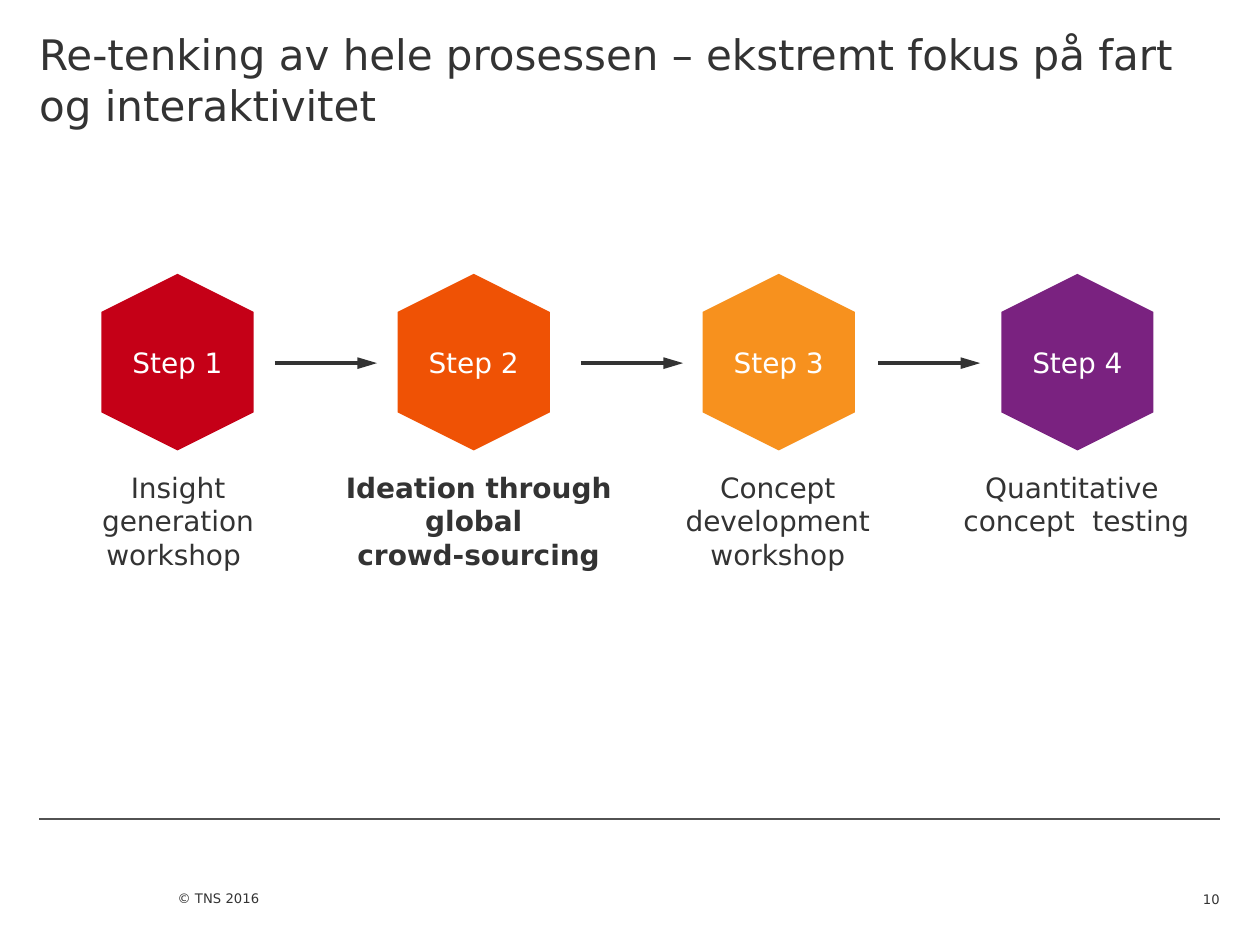
from collections import namedtuple

from lxml import etree
from pptx import Presentation
from pptx.dml.color import RGBColor
from pptx.enum.shapes import MSO_CONNECTOR, MSO_SHAPE
from pptx.enum.text import MSO_ANCHOR, MSO_AUTO_SIZE, PP_ALIGN
from pptx.oxml.ns import qn
from pptx.util import Cm, Pt

HEXAGON = MSO_SHAPE.HEXAGON
STRAIGHT = MSO_CONNECTOR.STRAIGHT
TOP, MIDDLE, BOTTOM = MSO_ANCHOR.TOP, MSO_ANCHOR.MIDDLE, MSO_ANCHOR.BOTTOM
LEFT, CENTER, RIGHT = PP_ALIGN.LEFT, PP_ALIGN.CENTER, PP_ALIGN.RIGHT
NO_AUTOFIT = MSO_AUTO_SIZE.NONE

FONT = "DejaVu Sans"
DARK = RGBColor(0x33, 0x33, 0x33)
GREY = RGBColor(0x52, 0x52, 0x52)
WHITE = RGBColor(0xFF, 0xFF, 0xFF)
RED = RGBColor(0xC5, 0x00, 0x17)
ORANGE = RGBColor(0xEF, 0x52, 0x05)
AMBER = RGBColor(0xF7, 0x91, 0x1E)
PURPLE = RGBColor(0x7A, 0x22, 0x80)

Box = namedtuple("Box", "left top width height")
Step = namedtuple("Step", "center color label label_center label_width bold")

STEPS = [
    Step(3.58, RED, "Insight generation workshop ", 3.59, 5.41, False),
    Step(9.55, ORANGE, "Ideation through \nglobal \vcrowd-sourcing", 9.65, 5.94, True),
    Step(15.7, AMBER, "Concept development workshop", 15.68, 5.41, False),
    Step(21.72, PURPLE, "Quantitative \vconcept  testing", 21.7, 6.88, False),
]
ARROW_CENTERS = [6.57, 12.74, 18.73]
ARROW_LENGTH = 2.06
HEXAGON_LENGTH, HEXAGON_WIDTH = 3.56, 3.07


def write_text(shape, text, size, color=DARK, align=LEFT, anchor=TOP, bold=False,
               insets=(0, 0, 0, 0)):
    """Fill a shape with formatted text; insets are left, top, right, bottom in cm."""
    frame = shape.text_frame
    frame.text = text
    frame.word_wrap = True
    frame.auto_size = NO_AUTOFIT
    frame.vertical_anchor = anchor
    (frame.margin_left, frame.margin_top,
     frame.margin_right, frame.margin_bottom) = map(Cm, insets)
    for paragraph in frame.paragraphs:
        paragraph.alignment = align
        for run in paragraph.runs:
            run.font.name = FONT
            run.font.size = Pt(size)
            run.font.bold = bold
            run.font.color.rgb = color


def add_text(slide, box, text, size, **style):
    """Add a text box."""
    write_text(slide.shapes.add_textbox(*map(Cm, box)), text, size, **style)


def add_line(slide, left, right, y, color, width, arrow=False):
    """Add a horizontal line, with an arrowhead at its right end on request."""
    line = slide.shapes.add_connector(STRAIGHT, Cm(left), Cm(y), Cm(right), Cm(y))
    line.line.color.rgb = color
    line.line.width = Pt(width)
    if arrow:
        etree.SubElement(line.line._get_or_add_ln(), qn("a:tailEnd"),
                         type="triangle", w="med", len="lg")
    etree.SubElement(line._element.spPr, qn("a:effectLst"))


def place_title(slide, box):
    """Place and format the title."""
    title = slide.shapes.title
    title.left, title.top, title.width, title.height = map(Cm, box)
    write_text(title, "Re-tenking av hele prosessen – ekstremt fokus på fart og interaktivitet",
               24, insets=(0, 0.58, 0, 0))


def add_step(slide, step, number, box):
    """Add one upright hexagon with its label below."""
    middle = box.top + HEXAGON_LENGTH / 2
    hexagon = slide.shapes.add_shape(
        HEXAGON, Cm(box.left + step.center - HEXAGON_LENGTH / 2),
        Cm(middle - HEXAGON_WIDTH / 2), Cm(HEXAGON_LENGTH), Cm(HEXAGON_WIDTH))
    hexagon.rotation = 270
    hexagon.shadow.inherit = False
    hexagon.fill.solid()
    hexagon.fill.fore_color.rgb = step.color
    hexagon.line.fill.background()
    write_text(hexagon, f"Step {number}", 16, color=WHITE, align=CENTER, anchor=MIDDLE)
    hexagon.text_frame._txBody.bodyPr.set("vert", "vert")

    label_height = 2.34
    label_box = Box(box.left + step.label_center - step.label_width / 2,
                    box.top + box.height - label_height, step.label_width, label_height)
    add_text(slide, label_box, step.label, 16, align=CENTER, bold=step.bold,
             insets=(0.25, 0.13, 0.25, 0.13))


def add_process(slide, box):
    """Add the four steps and the arrows between them."""
    for number, step in enumerate(STEPS, 1):
        add_step(slide, step, number, box)
    for center in ARROW_CENTERS:
        start = box.left + center - ARROW_LENGTH / 2
        add_line(slide, start, start + ARROW_LENGTH, box.top + 1.8, DARK, 2.25, arrow=True)


def add_footer(slide, box):
    """Add the rule, the copyright line and the page number."""
    right = box.left + box.width
    add_line(slide, box.left, right, box.top, GREY, 0.75)
    add_text(slide, Box(box.left + 2.79, box.top + 1.07, 7.06, 1.47), "© TNS 2016", 7.5,
             anchor=BOTTOM, insets=(0, 0, 0, 0.79))
    add_text(slide, Box(right - 1.4, box.top + 1.07, 1.4, 0.71), "10", 7.5,
             align=RIGHT, anchor=BOTTOM)


def main():
    """Build and save the slide."""
    presentation = Presentation()
    presentation.slide_width, presentation.slide_height = Cm(25.4), Cm(19.05)
    slide = presentation.slides.add_slide(presentation.slide_layouts[5])
    place_title(slide, Box(0.79, 0, 23.8, 2.87))
    add_process(slide, Box(0, 5.52, 25.4, 6.17))
    add_footer(slide, Box(0.79, 16.51, 23.8, 2.54))
    presentation.save("out.pptx")


if __name__ == "__main__":
    main()
